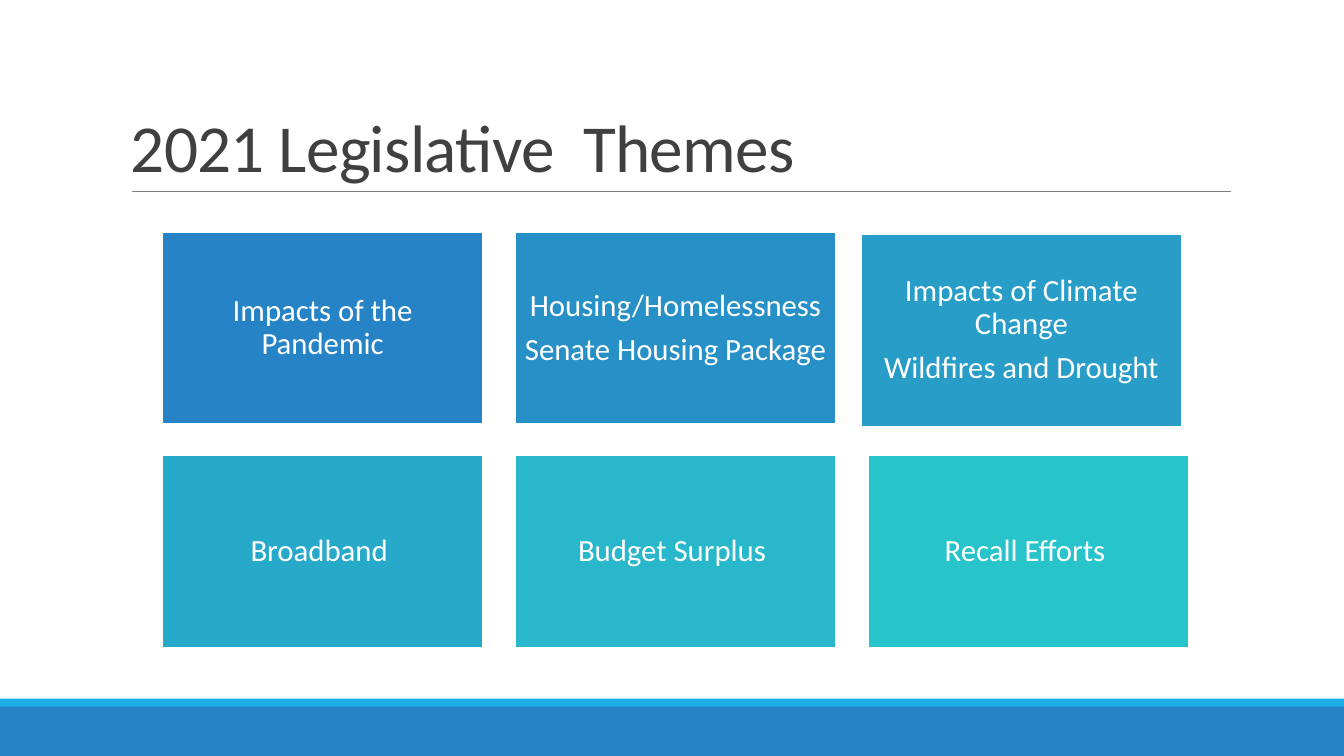
from lxml import etree
from pptx import Presentation
from pptx.dml.color import RGBColor
from pptx.enum.shapes import MSO_CONNECTOR, MSO_SHAPE
from pptx.enum.text import MSO_ANCHOR, PP_ALIGN
from pptx.oxml.ns import qn
from pptx.util import Inches, Pt

RECT = MSO_SHAPE.RECTANGLE
LINE = MSO_CONNECTOR.STRAIGHT
LEFT, CENTER = PP_ALIGN.LEFT, PP_ALIGN.CENTER
MIDDLE, BOTTOM = MSO_ANCHOR.MIDDLE, MSO_ANCHOR.BOTTOM

COLORS = {
    "white": "FFFFFF", "title": "404040", "rule": "808080",
    "bar": "2683C6", "strip": "1CADE4",
    "pandemic": "2683C6", "housing": "2690C7", "climate": "279DC8",
    "broadband": "27AACA", "budget": "28B7CB", "recall": "28C4CC",
}
CARDS = [
    (0, 0, "pandemic", ["Impacts of the Pandemic"]),
    (1, 0, "housing", ["Housing/Homelessness", "Senate Housing Package"]),
    (1.98, 0.01, "climate", ["Impacts of Climate Change", "Wildfires and Drought"]),
    (0, 1, "broadband", ["Broadband "]),
    (1, 1, "budget", ["Budget Surplus "]),
    (2, 1, "recall", ["Recall Efforts "]),
]


class Deck:
    font = "Calibri"
    wide, high = 13.33, 7.5
    left, top = 1.61, 2.3
    col, row = 3.5, 2.22
    card_w, card_h = 3.18, 1.91

    def __init__(self):
        self.prs = Presentation()
        self.prs.slide_width = Inches(self.wide)
        self.prs.slide_height = Inches(self.high)
        self.slide = self.prs.slides.add_slide(self.prs.slide_layouts[6])
        self.shapes = self.slide.shapes

    def color(self, name):
        return RGBColor.from_string(COLORS[name])

    def span(self, *shares):
        sides = self.wide, self.high
        return [Inches(share * sides[i % 2]) for i, share in enumerate(shares)]

    def label(self, frame, lines, size, name, align, anchor, pitch, after=0):
        frame.word_wrap = True
        frame.vertical_anchor = anchor
        for i, line in enumerate(lines):
            para = frame.add_paragraph() if i else frame.paragraphs[0]
            para.text = line
            para.alignment = align
            para.line_spacing = pitch
            para.space_after = Pt(after)
            para.font.name = self.font
            para.font.size = Pt(size)
            para.font.color.rgb = self.color(name)

    def rect(self, spots, name):
        shape = self.shapes.add_shape(RECT, *spots)
        shape.shadow.inherit = False
        shape.fill.solid()
        shape.fill.fore_color.rgb = self.color(name)
        shape.line.fill.background()
        return shape

    def band(self, y, h, name):
        self.rect(self.span(0, y / self.high, 1, h / self.high), name)

    def rule(self, x, end, y, name):
        spots = self.span(x / self.wide, y / self.high, end / self.wide, y / self.high)
        line = self.shapes.add_connector(LINE, *spots)
        line.line.color.rgb = self.color(name)
        line.line.width = Pt(0.5)
        etree.SubElement(line.element.spPr, qn("a:effectLst"))

    def title(self, x, y, w, h, text):
        spots = self.span(x / self.wide, y / self.high, w / self.wide, h / self.high)
        box = self.shapes.add_textbox(*spots)
        self.label(box.text_frame, [text], 48, "title", LEFT, BOTTOM, 0.85)
        for mark in box.element.iter(qn("a:r")):
            mark.get_or_add_rPr().set("spc", "-50")

    def card(self, col, row, name, lines):
        x, y = self.left + col * self.col, self.top + row * self.row
        shape = self.rect(map(Inches, (x, y, self.card_w, self.card_h)), name)
        shape.line.color.rgb = self.color("white")
        shape.line.width = Pt(1.25)
        frame = shape.text_frame
        frame.margin_left = frame.margin_right = Inches(0.09)
        frame.margin_top = frame.margin_bottom = Inches(0.09)
        self.label(frame, lines, 22, "white", CENTER, MIDDLE, 0.9, 7.7)

    def save(self):
        self.prs.save("out.pptx")


def main():
    deck = Deck()
    deck.rule(1.31, 12.21, 1.9, "rule")
    deck.band(7, 0.5, "bar")
    deck.band(6.93, 0.08, "strip")
    deck.title(1.2, 0.31, 11, 1.59, "2021 Legislative  Themes")
    for card in CARDS:
        deck.card(*card)
    deck.save()


if __name__ == "__main__":
    main()
